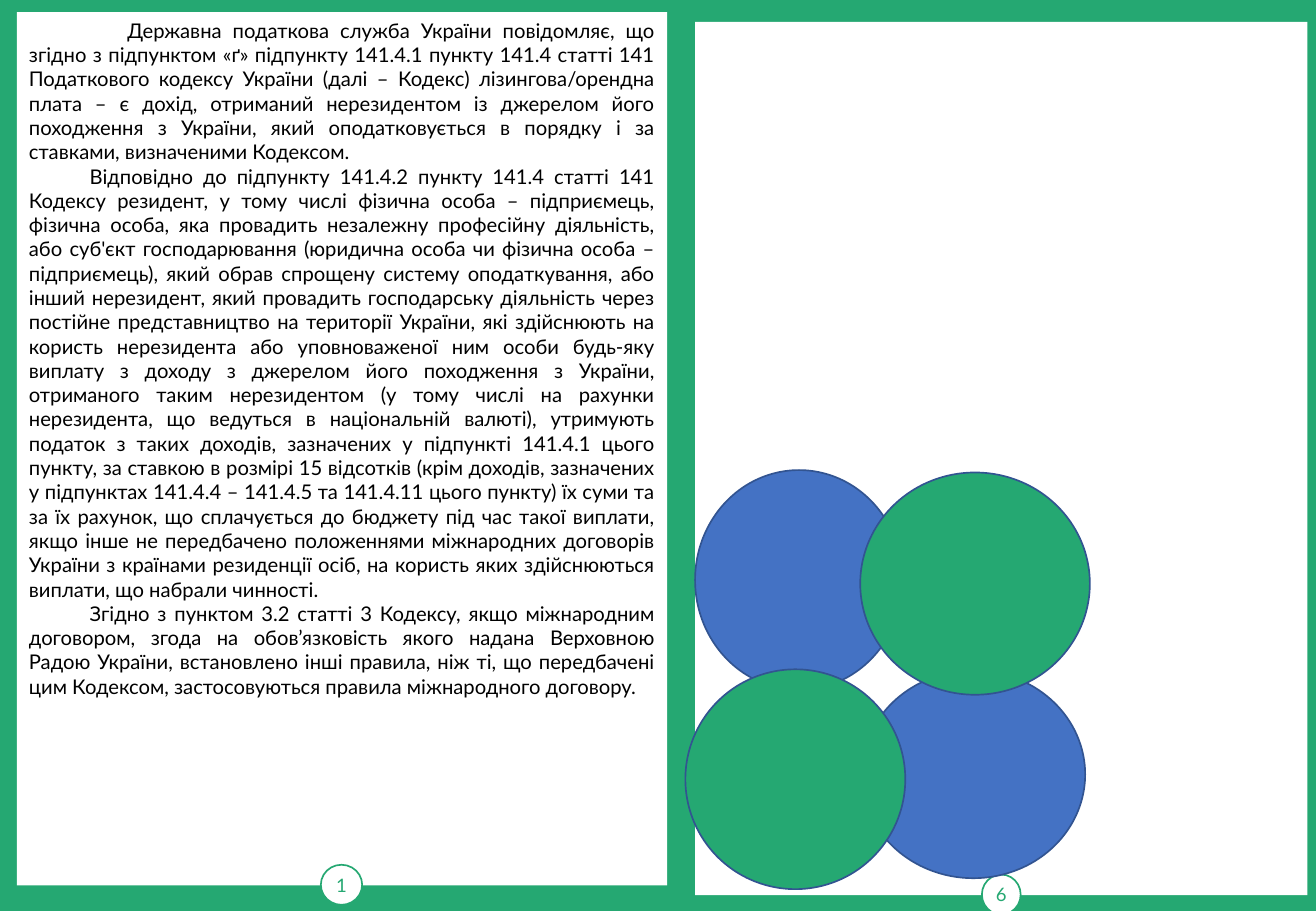
from pptx import Presentation
from pptx.dml.color import RGBColor
from pptx.enum.shapes import MSO_SHAPE
from pptx.enum.text import MSO_ANCHOR, PP_ALIGN
from pptx.util import Inches, Pt

SLIDE_WIDTH, SLIDE_HEIGHT = Inches(10.83), Inches(7.5)
GREEN, BLUE, OUTLINE = "25A872", "4472C4", "325491"
WHITE, BLACK = "FFFFFF", "000000"
FONT = "Lato"

# Boxes are left, top, width, height in percent of the slide
LEFT_PAGE = (1.29, 1.33, 49.4, 95.87)
RIGHT_PAGE = (52.82, 2.4, 46.54, 95.87)
BADGES = [
    ("1", (24.38, 94.93, 3.14, 4.4)),
    ("6", (74.61, 96, 2.95, 4.4)),
]
CIRCLES = [
    (BLUE, (52.82, 51.6, 15.79, 24.13)),
    (BLUE, (65.47, 73.6, 16.99, 22.8)),
    (GREEN, (52.08, 73.47, 16.71, 24.13)),
    (GREEN, (65.37, 51.87, 17.45, 24.4)),
]

# First-line indent in inches, then the runs of the paragraph
PARAGRAPHS = [
    (0.81, [
        "Державна податкова служба України повідомляє, що згідно з "
        "підпунктом «ґ» підпункту 141.4.1 пункту 141.4 статті 141 Податкового "
        "кодексу України (далі – Кодекс) лізингова/орендна плата – є дохід, "
        "отриманий нерезидентом із джерелом його походження з України, який "
        "оподатковується в порядку і за ставками, визначеними Кодексом.",
    ]),
    (0.5, [
        "Відповідно до підпункту 141.4.2 пункту 141.4 статті 141 Кодексу "
        "резидент, у тому числі фізична особа – підприємець, фізична особа, "
        "яка провадить незалежну професійну діяльність, або суб'єкт "
        "господарювання (юридична особа чи фізична особа – підприємець), який "
        "обрав спрощену систему оподаткування, ",
        "або інший нерезидент, який провадить господарську діяльність через "
        "постійне представництво на території України, які здійснюють на "
        "користь нерезидента або уповноваженої ним особи будь-яку виплату з "
        "доходу з джерелом його походження з України, отриманого таким "
        "нерезидентом (у тому числі на рахунки нерезидента, що ведуться в "
        "національній валюті), ",
        "утримують податок з таких доходів, зазначених у підпункті 141.4.1 "
        "цього пункту, за ставкою в розмірі 15 відсотків (крім доходів, "
        "зазначених у підпунктах 141.4.4 – 141.4.5 та 141.4.11 цього пункту) "
        "їх суми та за їх рахунок, що сплачується до бюджету під час такої "
        "виплати, якщо інше не передбачено положеннями міжнародних договорів "
        "України з країнами резиденції осіб, на користь яких здійснюються "
        "виплати, що набрали чинності.",
    ]),
    (0.5, [
        "Згідно з пунктом 3.2 статті 3 Кодексу, якщо міжнародним договором, "
        "згода на обов’язковість якого надана Верховною Радою України, "
        "встановлено інші правила, ніж ті, що передбачені цим Кодексом, "
        "застосовуються правила міжнародного договору.",
    ]),
]


def color(value):
    return RGBColor.from_string(value)


def place(box):
    left, top, width, height = (share / 100 for share in box)
    return (round(left * SLIDE_WIDTH), round(top * SLIDE_HEIGHT),
            round(width * SLIDE_WIDTH), round(height * SLIDE_HEIGHT))


def add_figure(slide, kind, box, fill, line=None):
    shape = slide.shapes.add_shape(kind, *place(box))
    shape.shadow.inherit = False
    shape.fill.solid()
    shape.fill.fore_color.rgb = color(fill)
    if line:
        shape.line.color.rgb = color(line)
        shape.line.width = Pt(1)
    else:
        shape.line.fill.background()
    return shape


def add_run(paragraph, text, size, text_color):
    run = paragraph.add_run()
    run.text = text
    run.font.name = FONT
    run.font.size = Pt(size)
    run.font.color.rgb = color(text_color)


def add_badge(slide, number, box):
    shape = add_figure(slide, MSO_SHAPE.OVAL, box, WHITE, GREEN)
    frame = shape.text_frame
    frame.margin_left = frame.margin_right = 0
    frame.margin_top = frame.margin_bottom = 0
    frame.vertical_anchor = MSO_ANCHOR.MIDDLE
    paragraph = frame.paragraphs[0]
    paragraph.alignment = PP_ALIGN.CENTER
    add_run(paragraph, number, 11, GREEN)


def add_article(slide, box):
    frame = slide.shapes.add_textbox(*place(box)).text_frame
    frame.word_wrap = True
    for index, (indent, texts) in enumerate(PARAGRAPHS):
        paragraph = frame.add_paragraph() if index else frame.paragraphs[0]
        paragraph.alignment = PP_ALIGN.JUSTIFY
        properties = paragraph._p.get_or_add_pPr()
        properties.set("marL", "0")
        properties.set("indent", str(Inches(indent)))
        for text in texts:
            add_run(paragraph, text, 12, BLACK)


def main():
    presentation = Presentation()
    presentation.slide_width = SLIDE_WIDTH
    presentation.slide_height = SLIDE_HEIGHT
    slide = presentation.slides.add_slide(presentation.slide_layouts[6])
    slide.background.fill.solid()
    slide.background.fill.fore_color.rgb = color(GREEN)

    # Two pages with their numbers
    for page in (LEFT_PAGE, RIGHT_PAGE):
        add_figure(slide, MSO_SHAPE.RECTANGLE, page, WHITE)
    for number, box in BADGES:
        add_badge(slide, number, box)

    # Overlapping circles
    for fill, box in CIRCLES:
        add_figure(slide, MSO_SHAPE.FLOWCHART_CONNECTOR, box, fill, OUTLINE)

    # Article on the left page
    add_article(slide, LEFT_PAGE)

    presentation.save("out.pptx")


if __name__ == "__main__":
    main()
